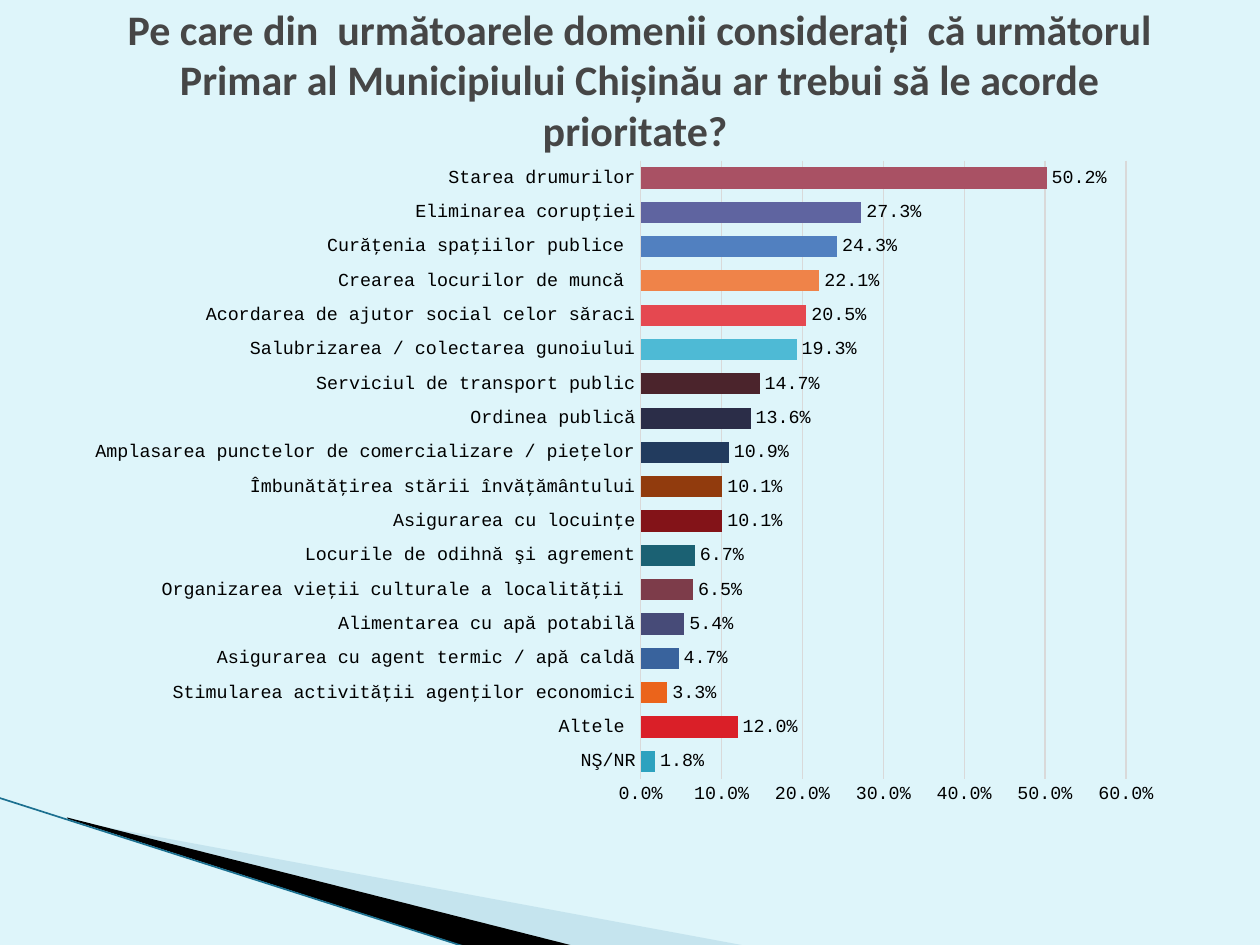
from dataclasses import dataclass

from lxml.etree import SubElement
from pptx import Presentation
from pptx.chart.data import CategoryChartData
from pptx.dml.color import RGBColor
from pptx.enum.chart import XL_CHART_TYPE as ChartType, XL_LABEL_POSITION as LabelPosition
from pptx.enum.chart import XL_TICK_MARK as TickMark
from pptx.enum.shapes import MSO_CONNECTOR as Connector
from pptx.enum.text import MSO_ANCHOR as Anchor, PP_ALIGN as Align
from pptx.oxml.ns import qn
from pptx.util import Cm, Pt


@dataclass(frozen=True)
class Theme:
    background: RGBColor = RGBColor.from_string("DEF5FA")
    title: RGBColor = RGBColor.from_string("464646")
    text: RGBColor = RGBColor.from_string("000000")
    grid: RGBColor = RGBColor.from_string("D9D9D9")
    pale_band: RGBColor = RGBColor.from_string("A0CBDC")
    dark_band: RGBColor = RGBColor.from_string("000000")
    edge: RGBColor = RGBColor.from_string("1B7090")
    title_font: str = "Calibri"
    chart_font: str = "Courier New"
    title_size: Pt = Pt(24)
    chart_size: Pt = Pt(10.5)


theme = Theme()

# Bottom to top: label, share, bar colour
PRIORITIES = [
    ("NŞ/NR", 0.018, "2DA2BF"),
    ("Altele ", 0.12, "DA1F28"),
    ("Stimularea activităţii agenţilor economici", 0.033, "EB641B"),
    ("Asigurarea cu agent termic / apă caldă", 0.047, "39639D"),
    ("Alimentarea cu apă potabilă", 0.054, "474B78"),
    ("Organizarea vieţii culturale a localităţii ", 0.065, "7D3C4A"),
    ("Locurile de odihnă şi agrement", 0.067, "1B6173"),
    ("Asigurarea cu locuinţe", 0.101, "831318"),
    ("Îmbunătăţirea stării învăţământului", 0.101, "913B0D"),
    ("Amplasarea punctelor de comercializare / pieţelor", 0.109, "223B5E"),
    ("Ordinea publică", 0.136, "2B2D48"),
    ("Serviciul de transport public", 0.147, "4B242C"),
    ("Salubrizarea / colectarea gunoiului", 0.193, "4EBAD5"),
    ("Acordarea de ajutor social celor săraci", 0.205, "E54850"),
    ("Crearea locurilor de muncă ", 0.221, "EF8349"),
    ("Curăţenia spaţiilor publice ", 0.243, "5180C0"),
    ("Eliminarea corupţiei", 0.273, "5F64A0"),
    ("Starea drumurilor", 0.502, "A95164"),
]


def apply(target, values):
    """Set every attribute in values on target."""
    for name, value in values.items():
        setattr(target, name, value)


deck = Presentation()
apply(deck, {"slide_width": Cm(25.4), "slide_height": Cm(19.05)})
page = deck.slides.add_slide(deck.slide_layouts[6])
page.background.fill.solid()
page.background.fill.fore_color.rgb = theme.background

# Corner decoration
bands = [
    (theme.pale_band, 40, [(1.4, 16.54), (15.11, 19.08), (11.58, 19.08), (1.4, 16.51)]),
    (theme.dark_band, 100, [(1.35, 16.48), (11.61, 19.08), (9.45, 19.1), (1.37, 16.51)]),
]
for color, opacity, corners in bands:
    points = [(Cm(x), Cm(y)) for x, y in corners]
    builder = page.shapes.build_freeform(*points[0])
    builder.add_line_segments(points[1:], close=True)
    band = builder.convert_to_shape()
    band.shadow.inherit = False
    band.fill.solid()
    band.fill.fore_color.rgb = color
    band.line.fill.background()
    if opacity < 100:
        fill_color = band._element.spPr.find(qn("a:solidFill"))[0]
        SubElement(fill_color, qn("a:alpha"), val=str(opacity * 1000))

edge = page.shapes.add_connector(Connector.STRAIGHT, Cm(-0.03), Cm(16.08), Cm(9.42), Cm(19.1))
edge.line.color.rgb = theme.edge
edge.line.width = Pt(0.95)
SubElement(edge._element.spPr, qn("a:effectLst"))

# Title
box = page.shapes.add_textbox(Cm(1.47), Cm(0), Cm(22.86), Cm(3.18))
apply(box.text_frame, {"word_wrap": True, "vertical_anchor": Anchor.MIDDLE})
para = box.text_frame.paragraphs[0]
para.alignment = Align.CENTER
span = para.add_run()
span.text = (
    "Pe care din  următoarele domenii considerați  că următorul "
    "Primar al Municipiului Chișinău ar trebui să le acorde prioritate? "
)
apply(span.font, {"name": theme.title_font, "size": theme.title_size, "bold": True})
span.font.color.rgb = theme.title

# Chart
labels, shares, bar_colors = zip(*PRIORITIES)
chart_data = CategoryChartData(number_format="0.0%")
chart_data.categories = labels
chart_data.add_series("Series 1", shares)
chart = page.shapes.add_chart(
    ChartType.BAR_CLUSTERED, Cm(1.47), Cm(2.97), Cm(22.23), Cm(13.54), chart_data
).chart
apply(chart, {"has_legend": False, "has_title": False})

plot = chart.plots[0]
apply(plot, {"gap_width": 61, "vary_by_categories": False, "has_data_labels": True})
apply(plot.data_labels, {
    "show_value": True,
    "number_format": "0.0%",
    "number_format_is_linked": False,
    "position": LabelPosition.OUTSIDE_END,
})
for index, color in enumerate(bar_colors):
    fill = plot.series[0].points[index].format.fill
    fill.solid()
    fill.fore_color.rgb = RGBColor.from_string(color)

no_ticks = {"major_tick_mark": TickMark.NONE, "minor_tick_mark": TickMark.NONE}
category_axis, value_axis = chart.category_axis, chart.value_axis
apply(category_axis, {**no_ticks, "has_major_gridlines": False})
apply(value_axis, {
    **no_ticks,
    "has_major_gridlines": True,
    "minimum_scale": 0,
    "maximum_scale": 0.6,
    "major_unit": 0.1,
})
apply(value_axis.tick_labels, {"number_format": "0.0%", "number_format_is_linked": False})
value_axis.format.line.fill.background()
for line in (category_axis.format.line, value_axis.major_gridlines.format.line):
    line.color.rgb = theme.grid
    line.width = Pt(0.75)

for owner in (chart, category_axis.tick_labels, value_axis.tick_labels, plot.data_labels):
    apply(owner.font, {"name": theme.chart_font, "size": theme.chart_size, "bold": False})
    owner.font.color.rgb = theme.text

# Fixed plot area, as fractions of the chart
plot_area = chart._chartSpace.chart.plotArea
layout = plot_area.find(qn("c:layout"))
if layout is None:
    layout = SubElement(plot_area, qn("c:layout"))
    plot_area.insert(0, layout)
manual = SubElement(layout, qn("c:manualLayout"))
for tag, value in {
    "layoutTarget": "inner", "xMode": "edge", "yMode": "edge",
    "x": "0.515", "y": "0.02", "w": "0.44", "h": "0.92",
}.items():
    SubElement(manual, qn(f"c:{tag}"), val=value)

deck.save("out.pptx")
